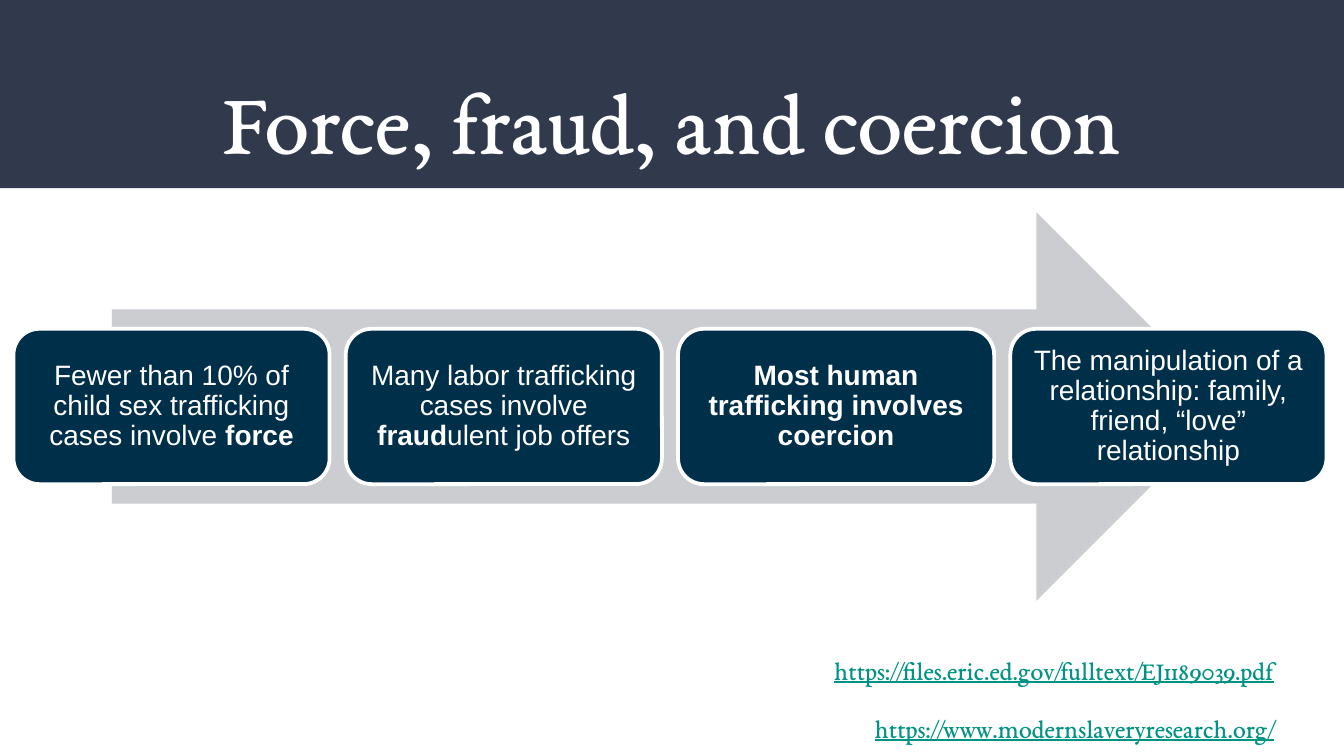
from pptx import Presentation
from pptx import util as u
from pptx.dml.color import RGBColor
from pptx.enum import shapes, text

WHITE = RGBColor(0xFF, 0xFF, 0xFF)
SLATE = RGBColor(0x31, 0x39, 0x4D)
NAVY = RGBColor(0x00, 0x2F, 0x4A)
GREY = RGBColor(0xCC, 0xCD, 0xD0)
TEAL = RGBColor(0x00, 0x93, 0x84)

WIDTH = 10
HEIGHT = WIDTH * 9 / 16

TITLE = dict(name="EB Garamond", size=u.Pt(48), color=WHITE)
CARD = dict(name="Arial", size=u.Pt(15), color=WHITE)
LINK = dict(name="EB Garamond", size=u.Pt(14), color=TEAL, underline=True)

CARDS = [
    [("Fewer than 10% of child sex trafficking cases involve ", False),
     ("force", True)],
    [("Many labor trafficking cases involve ", False), ("fraud", True),
     ("ulent job offers", False)],
    [("Most human trafficking involves coercion", True)],
    [("The manipulation of a relationship: family, friend, “love” relationship",
      False)],
]
# Each address with its share of the links' full width
LINKS = [("https://files.eric.ed.gov/fulltext/EJ1189039.pdf", 1),
         ("https://www.modernslaveryresearch.org/", 0.66)]


def inches(*box):
    return [u.Inches(v) for v in box]


def add_block(s, kind, box, fill):
    sp = s.shapes.add_shape(kind, *inches(*box))
    sp.shadow.inherit = False
    sp.fill.solid()
    sp.fill.fore_color.rgb = fill
    sp.line.fill.background()
    return sp


def write(sp, runs, fmt, align, inset=(0.1, 0.05), anchor=text.MSO_ANCHOR.TOP):
    """Fill the shape with one paragraph of (wording, bold) runs."""
    tf = sp.text_frame
    tf.word_wrap = True
    tf.vertical_anchor = anchor
    tf.margin_left = tf.margin_right = u.Inches(inset[0])
    tf.margin_top = tf.margin_bottom = u.Inches(inset[1])
    p = tf.paragraphs[0]
    p.alignment = align
    for wording, bold in runs:
        r = p.add_run()
        r.text = wording
        r.font.bold = bold
        for key, value in fmt.items():
            if key == "color":
                r.font.color.rgb = value
            else:
                setattr(r.font, key, value)
    return p


def add_header(s, box):
    x, y, w, h = box
    add_block(s, shapes.MSO_SHAPE.RECTANGLE, box, SLATE)
    title = s.shapes.add_textbox(
        *inches(x + 0.034 * w, y + 0.275 * h, 0.932 * w, 0.486 * h))
    write(title, [("Force, fraud, and coercion", False)], TITLE,
          text.PP_ALIGN.CENTER, (0.1, 0.1))


def add_process(s, box, gap=0.12):
    """Place a row of cards across the middle of a wide arrow."""
    x, y, w, h = box
    add_block(s, shapes.MSO_SHAPE.RIGHT_ARROW,
              (x + 0.075 * w, y, 0.852 * w, h), GREY)
    card_w = (w - gap * (len(CARDS) - 1)) / len(CARDS)
    for i, runs in enumerate(CARDS):
        card = add_block(s, shapes.MSO_SHAPE.ROUNDED_RECTANGLE,
                         (x + i * (card_w + gap), y + 0.3 * h, card_w, 0.4 * h),
                         NAVY)
        card.line.color.rgb = WHITE
        card.line.width = u.Pt(2)
        p = write(card, runs, CARD, text.PP_ALIGN.CENTER, (0.06, 0.06),
                  text.MSO_ANCHOR.MIDDLE)
        p.line_spacing = 0.9


def add_links(s, box):
    """Stack the addresses against the right edge of the box."""
    x, y, w, h = box
    pitch = h / len(LINKS)
    for i, (address, share) in enumerate(LINKS):
        tb = s.shapes.add_textbox(
            *inches(x + w * (1 - share), y + i * pitch, w * share, 0.34))
        write(tb, [(address, False)], LINK, text.PP_ALIGN.RIGHT)


def main():
    prs = Presentation()
    prs.slide_width, prs.slide_height = inches(WIDTH, HEIGHT)
    s = prs.slides.add_slide(prs.slide_layouts[6])
    add_header(s, (0, 0, WIDTH, 1.4))
    add_process(s, (0.1, 1.58, 9.77, 2.89))
    add_links(s, (4.18, 4.82, 5.4, 0.86))
    prs.save("out.pptx")


if __name__ == "__main__":
    main()
